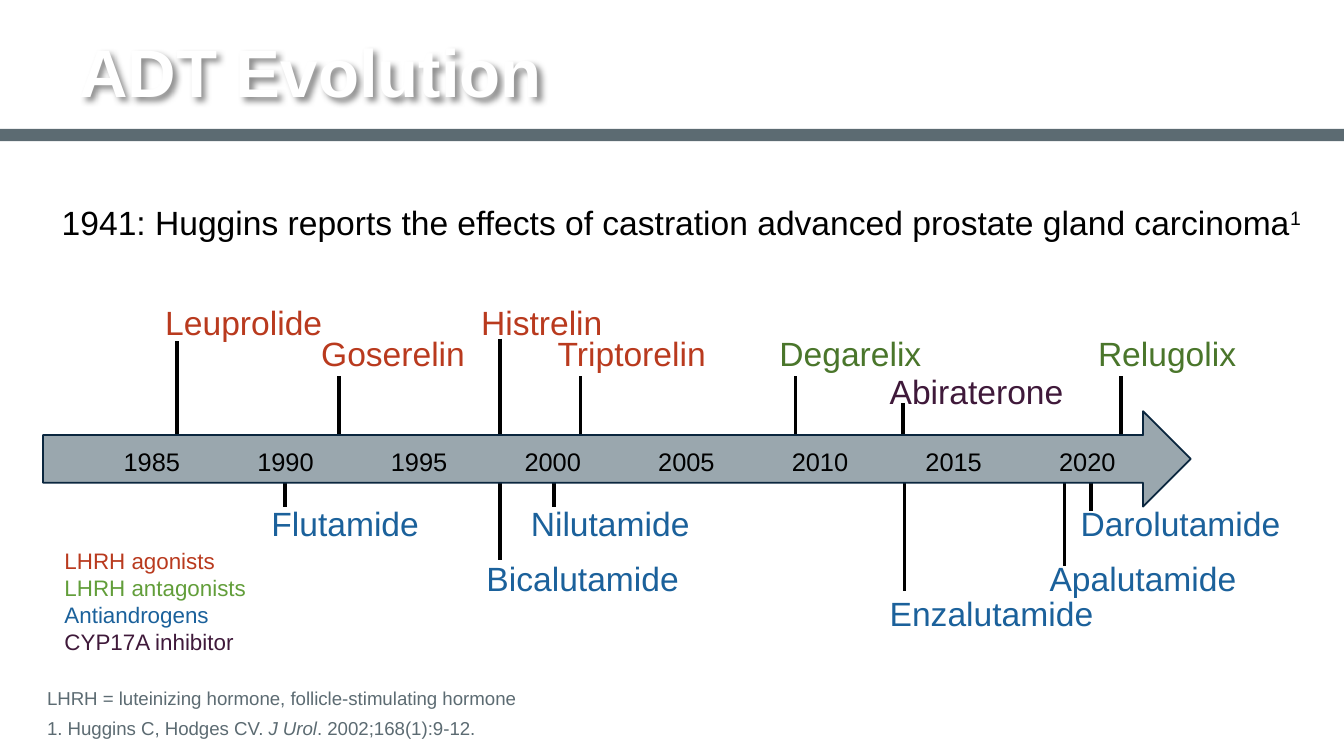
"""Build the ADT evolution timeline slide."""
from dataclasses import dataclass

from lxml import etree
from pptx import Presentation
from pptx.dml.color import RGBColor
from pptx.enum.shapes import MSO_CONNECTOR, MSO_SHAPE
from pptx.enum.text import MSO_ANCHOR, PP_ALIGN
from pptx.oxml.ns import qn
from pptx.util import Inches, Pt

LINE = MSO_CONNECTOR.STRAIGHT
RECT, ARROW = MSO_SHAPE.RECTANGLE, MSO_SHAPE.RIGHT_ARROW
TOP, MID, LOW = MSO_ANCHOR.TOP, MSO_ANCHOR.MIDDLE, MSO_ANCHOR.BOTTOM
LEFT, CENTER = PP_ALIGN.LEFT, PP_ALIGN.CENTER


@dataclass(frozen=True)
class Theme:
    """Colours, font and type sizes."""
    font: str = "Arial"
    white: str = "FFFFFF"
    black: str = "000000"
    slate: str = "5C6B72"
    steel: str = "9AA7AE"
    navy: str = "0A263E"
    red: str = "B93A1E"
    green: str = "4A762B"
    lime: str = "629E3A"
    blue: str = "1B619B"
    plum: str = "3F193A"
    title: float = 36
    body: float = 18
    year: float = 13.6
    key: float = 12
    note: float = 10


@dataclass(frozen=True)
class Run:
    """A piece of text with its own style."""
    text: str
    color: str
    italic: bool = False
    base: int = 0


@dataclass(frozen=True)
class Drug:
    """A drug label and the stem that ties it to the arrow."""
    name: str
    color: str
    left: float
    top: float
    stem: float
    start: float
    size: float


T = Theme()
DRUGS = [
    Drug("Leuprolide", T.red, 1.23, 2.25, 1.32, 2.54, 0.9),
    Drug("Histrelin", T.red, 3.58, 2.25, 3.72, 2.52, 0.9),
    Drug("Goserelin", T.red, 2.39, 2.48, 2.52, 2.8, 0.5),
    Drug("Triptorelin", T.red, 4.15, 2.48, 4.32, 2.8, 0.5),
    Drug("Degarelix", T.green, 5.8, 2.48, 5.92, 2.8, 0.5),
    Drug("Relugolix", T.green, 8.17, 2.48, 8.34, 2.8, 0.5),
    Drug("Abiraterone", T.plum, 6.62, 2.76, 6.72, 3, 0.3),
    Drug("Flutamide", T.blue, 2.02, 3.74, 2.12, 3.47, 0.3),
    Drug("Nilutamide", T.blue, 3.95, 3.74, 4.12, 3.47, 0.3),
    Drug("Darolutamide", T.blue, 8.04, 3.74, 8.12, 3.5, 0.3),
    Drug("Bicalutamide", T.blue, 3.62, 4.15, 3.72, 3.47, 0.7),
    Drug("Apalutamide", T.blue, 7.81, 4.15, 7.92, 3.51, 0.7),
    Drug("Enzalutamide", T.blue, 6.62, 4.41, 6.73, 3.5, 0.9),
]
KEYS = [("LHRH agonists", T.red), ("LHRH antagonists", T.lime),
        ("Antiandrogens", T.blue), ("CYP17A inhibitor", T.plum)]
YEARS = range(1985, 2021, 5)
FIRST, STEP = 1.13, 6.96 / 7


def write(slide, rows: list[list[Run]], box: tuple, *, size: float,
          bold: bool = False, align=LEFT, anchor=TOP, lead: float = 1,
          gap: float = 0, wrap: bool = True):
    """Add a text box with one paragraph for each row of runs."""
    shape = slide.shapes.add_textbox(*map(Inches, box))
    frame = shape.text_frame
    frame.word_wrap, frame.vertical_anchor = wrap, anchor
    frame.margin_left = frame.margin_right = 0
    frame.margin_top = frame.margin_bottom = 0
    for i, row in enumerate(rows):
        para = frame.add_paragraph() if i else frame.paragraphs[0]
        para.alignment, para.line_spacing = align, lead
        para.space_before = Pt(gap if i else 0)
        for part in row:
            run = para.add_run()
            run.text = part.text
            font = run.font
            font.name, font.size = T.font, Pt(size)
            font.bold, font.italic = bold, part.italic
            font.color.rgb = RGBColor.from_string(part.color)
            if part.base:
                run._r.get_or_add_rPr().set("baseline", str(part.base * 1000))
    return shape


def shade(shape) -> None:
    """Give an unfilled text box a soft shadow behind its letters."""
    effect = etree.SubElement(shape._element.spPr, qn("a:effectLst"))
    drop = etree.SubElement(effect, qn("a:outerShdw"), blurRad="38100",
                            dist="38100", dir="2700000", algn="tl")
    tint = etree.SubElement(drop, qn("a:srgbClr"), val=T.black)
    etree.SubElement(tint, qn("a:alpha"), val="43000")


def block(slide, kind, box: tuple, fill: str, edge: str = "") -> None:
    """Add a filled shape, with an outline if an edge colour is given."""
    shape = slide.shapes.add_shape(kind, *map(Inches, box))
    shape.shadow.inherit = False
    shape.fill.solid()
    shape.fill.fore_color.rgb = RGBColor.from_string(fill)
    if edge:
        shape.line.color.rgb = RGBColor.from_string(edge)
        shape.line.width = Pt(1)
    else:
        shape.line.fill.background()


def stem(slide, drug: Drug) -> None:
    """Add the upright line of a drug."""
    x = Inches(drug.stem)
    line = slide.shapes.add_connector(
        LINE, x, Inches(drug.start), x, Inches(drug.start + drug.size))
    line.line.color.rgb = RGBColor.from_string(T.black)
    line.line.width = Pt(2)
    etree.SubElement(line._element.spPr, qn("a:effectLst"))


def main() -> None:
    """Build and save the slide."""
    deck = Presentation()
    deck.slide_width, deck.slide_height = Inches(10), Inches(10 * 9 / 16)
    slide = deck.slides.add_slide(deck.slide_layouts[6])

    block(slide, RECT, (0, 0.96, 10, 0.09), T.slate)
    title = write(slide, [[Run("ADT Evolution", T.white)]],
                  (0.59, 0.26, 8.96, 0.62), size=T.title, bold=True,
                  anchor=MID, lead=0.85)
    shade(title)
    lead = "1941: Huggins reports the effects of castration advanced prostate gland carcinoma"
    write(slide, [[Run(lead, T.black), Run("1", T.black, base=30)]],
          (0.46, 1.55, 9.4, 0.4), size=T.body, lead=0.85)
    write(slide, [
        [Run("LHRH = luteinizing hormone, follicle-stimulating hormone", T.slate)],
        [Run("1. Huggins C, Hodges CV. ", T.slate),
         Run("J Urol", T.slate, italic=True),
         Run(". 2002;168(1):9-12.", T.slate)],
    ], (0.35, 5.12, 9.65, 0.38), size=T.note, anchor=LOW, lead=0.85, gap=6)

    for drug in DRUGS:
        stem(slide, drug)
    for drug in DRUGS:
        write(slide, [[Run(drug.name, drug.color)]],
              (drug.left, drug.top, 1.6, 0.3), size=T.body, wrap=False)
    block(slide, ARROW, (0.32, 3.06, 8.54, 0.71), T.steel, T.navy)
    for i, year in enumerate(YEARS):
        write(slide, [[Run(str(year), T.black)]],
              (FIRST + i * STEP - 0.4, 3.32, 0.8, 0.24),
              size=T.year, align=CENTER)
    write(slide, [[Run(*key)] for key in KEYS], (0.48, 4.07, 1.4, 0.81),
          size=T.key)
    deck.save("out.pptx")


if __name__ == "__main__":
    main()
